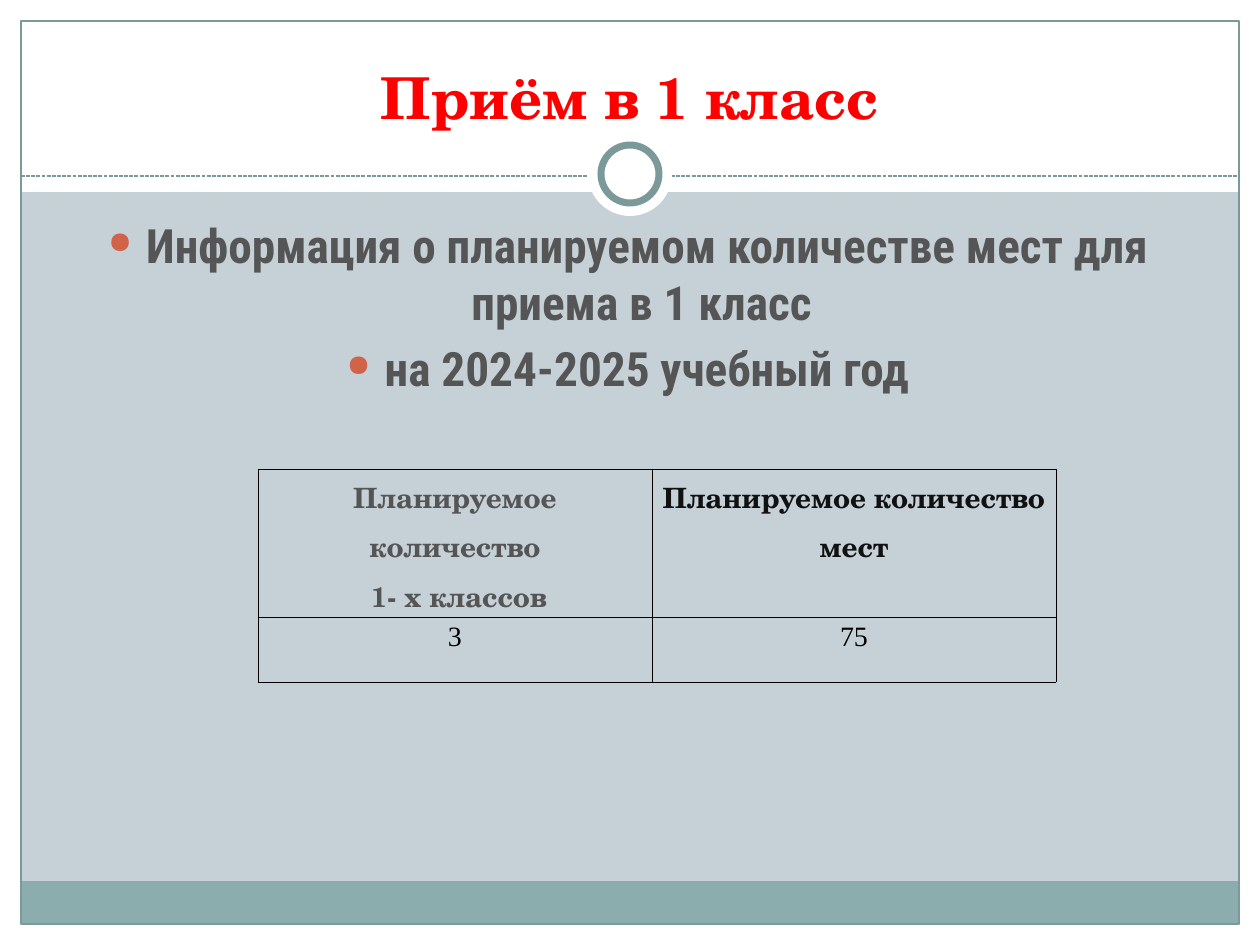
from lxml.etree import SubElement
from pptx import Presentation
from pptx.dml.color import RGBColor
from pptx.enum.dml import MSO_LINE
from pptx.enum.shapes import MSO_CONNECTOR, MSO_SHAPE
from pptx.enum.text import MSO_ANCHOR, MSO_AUTO_SIZE, PP_ALIGN
from pptx.oxml import parse_xml
from pptx.oxml.ns import nsdecls, qn
from pptx.util import Emu, Pt

WIDTH, HEIGHT, MARGIN = 1260, 945, 21
COLORS = {
    "background": "C5D1D7", "white": "FFFFFF", "band": "8CADAE", "frame": "7C999A",
    "title": "FF0000", "text": "555555", "heading": "111111", "black": "000000",
    "bullet": "D16349",
}
SERIF, SANS, ROMAN = "TeX Gyre Schola", "Roboto Condensed", "Times New Roman"


def px(length):
    """Turn pixels into EMU."""
    return Emu(round(length * 914400 / 126))


def color(name):
    """Return the named palette colour."""
    return RGBColor.from_string(COLORS[name])


def write_text(text_frame, lines, font, size, ink, bold=True, line_spacing=None, space_before=None):
    """Fill a text frame with centred paragraphs and return them."""
    text_frame.word_wrap = True
    for index, line in enumerate(lines):
        paragraph = text_frame.paragraphs[0] if index == 0 else text_frame.add_paragraph()
        paragraph.alignment = PP_ALIGN.CENTER
        paragraph.line_spacing = line_spacing
        paragraph.space_before = space_before
        run = paragraph.add_run()
        run.text = line
        run.font.name, run.font.size, run.font.bold = font, Pt(size), bold
        run.font.color.rgb = color(ink)
    return text_frame.paragraphs


def add_shape(slide, kind, box, fill=None, line=None, line_width=0.75):
    """Add a preset shape with an optional fill and outline."""
    shape = slide.shapes.add_shape(kind, *map(px, box))
    shape.shadow.inherit = False
    if fill:
        shape.fill.solid()
        shape.fill.fore_color.rgb = color(fill)
    else:
        shape.fill.background()
    if line:
        shape.line.color.rgb = color(line)
        shape.line.width = Pt(line_width)
    else:
        shape.line.fill.background()
    return shape


def add_frame(slide, box):
    """Draw the white surround, header, footer band and outline."""
    left, top, width, height = box
    right, bottom = left + width, top + height
    for area in (
        (0, bottom, WIDTH, HEIGHT - bottom),
        (0, 0, WIDTH, 192),
        (0, 0, left, HEIGHT),
        (right, 0, WIDTH - right, HEIGHT),
    ):
        add_shape(slide, MSO_SHAPE.RECTANGLE, area, "white")
    add_shape(slide, MSO_SHAPE.RECTANGLE, (left, bottom - 43, width, 43), "band")
    add_shape(slide, MSO_SHAPE.RECTANGLE, box, line="frame")


def add_divider(slide, box):
    """Draw the dashed rule with a ring at its middle."""
    left, top, width, height = box
    rule_y = top + height // 2 + 2
    rule = slide.shapes.add_connector(
        MSO_CONNECTOR.STRAIGHT, px(left), px(rule_y), px(left + width), px(rule_y))
    rule.line.color.rgb = color("frame")
    rule.line.width = Pt(0.75)
    rule.line.dash_style = MSO_LINE.SQUARE_DOT
    SubElement(rule.element.spPr, qn("a:effectLst"))
    for diameter, line in ((height, None), (58, "frame")):
        circle = (left + (width - diameter) / 2, top + (height - diameter) / 2, diameter, diameter)
        add_shape(slide, MSO_SHAPE.OVAL, circle, "white", line, 4)


def place_title(slide, box, text):
    """Move the title placeholder to its box, in front of the frame."""
    title = slide.shapes.title
    title.left, title.top, title.width, title.height = map(px, box)
    title.element.getparent().append(title.element)
    title.text_frame.auto_size = MSO_AUTO_SIZE.NONE
    title.text_frame.vertical_anchor = MSO_ANCHOR.BOTTOM
    write_text(title.text_frame, [text], SERIF, 33, "title")


def add_bullets(slide, box, lines):
    """Add the centred bullet list."""
    text_frame = slide.shapes.add_textbox(*map(px, box)).text_frame
    for paragraph in write_text(text_frame, lines, SANS, 27, "text", space_before=Pt(5.4)):
        properties = paragraph._p.get_or_add_pPr()
        properties.set("marL", str(px(38)))
        properties.set("indent", str(-px(38)))
        bullet_color = SubElement(properties, qn("a:buClr"))
        SubElement(bullet_color, qn("a:srgbClr"), val=COLORS["bullet"])
        SubElement(properties, qn("a:buSzPct"), val="64000")
        SubElement(properties, qn("a:buChar"), char="●")


def format_cell(cell):
    """Give a cell its margins, clear fill and thin black borders."""
    cell.margin_left = cell.margin_right = px(9)
    cell.margin_top = cell.margin_bottom = 0
    cell.fill.background()
    properties = cell._tc.get_or_add_tcPr()
    for index, side in enumerate("LRTB"):
        properties.insert(index, parse_xml(
            f'<a:ln{side} {nsdecls("a")} w="{Pt(0.5)}"><a:solidFill>'
            f'<a:srgbClr val="{COLORS["black"]}"/></a:solidFill></a:ln{side}>'))


def add_places_table(slide, box, columns, rows, contents):
    """Add the table of planned classes and places."""
    table = slide.shapes.add_table(len(rows), len(columns), *map(px, box)).table
    table.first_row = table.horz_banding = False
    for column, width in zip(table.columns, columns):
        column.width = px(width)
    for row, height, entries in zip(table.rows, rows, contents):
        row.height = px(height)
        for cell, (lines, font, ink, bold) in zip(row.cells, entries):
            format_cell(cell)
            write_text(cell.text_frame, lines, font, 16, ink, bold, line_spacing=1.15)


def main():
    """Build and save the slide."""
    presentation = Presentation()
    presentation.slide_width, presentation.slide_height = px(WIDTH), px(HEIGHT)
    slide = presentation.slides.add_slide(presentation.slide_layouts.get_by_name("Title Only"))
    slide.background.fill.solid()
    slide.background.fill.fore_color.rgb = color("background")

    inner_width = WIDTH - 2 * MARGIN
    add_frame(slide, (MARGIN, MARGIN, inner_width, HEIGHT - 2 * MARGIN))
    add_divider(slide, (MARGIN, 132, inner_width, 84))
    place_title(slide, (42, 32, 1176, 105), "Приём в 1 класс")
    add_bullets(slide, (42, 210, 1172, 630), [
        "Информация о планируемом количестве мест для приема в 1 класс ",
        "на 2024-2025 учебный год",
    ])
    add_places_table(slide, (258, 469, 798, 213), (394, 404), (148, 65), [
        [
            (["Планируемое количество", " 1- х классов"], SERIF, "text", True),
            (["Планируемое количество мест"], SERIF, "heading", True),
        ],
        [(["3"], ROMAN, "black", False), (["75"], ROMAN, "black", False)],
    ])
    presentation.save("out.pptx")


if __name__ == "__main__":
    main()
